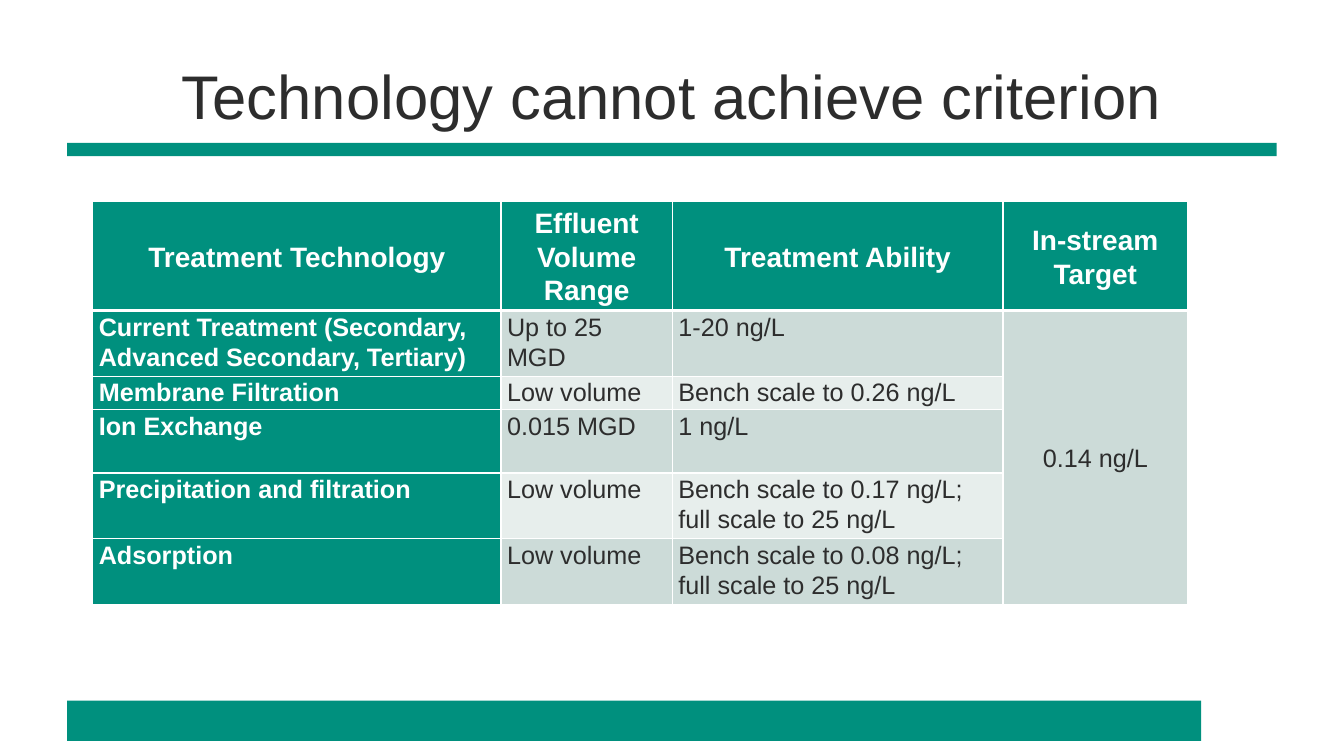
import pptx
import pptx.dml.color
import pptx.enum.shapes
import pptx.enum.text
import pptx.oxml
import pptx.oxml.ns
import pptx.util

Pt = pptx.util.Pt
RGBColor = pptx.dml.color.RGBColor
ANCHOR = pptx.enum.text.MSO_ANCHOR
ALIGN = pptx.enum.text.PP_ALIGN

TEAL = RGBColor(0x00, 0x90, 0x7E)
INK = RGBColor(0x2D, 0x2D, 0x2D)
WHITE = RGBColor(0xFF, 0xFF, 0xFF)
BAND_DARK = RGBColor(0xCC, 0xDB, 0xD8)
BAND_LIGHT = RGBColor(0xE7, 0xEE, 0xEC)

TITLE = "Technology cannot achieve criterion"
TARGET = "0.14 ng/L"
TREATMENTS = [
    ["Treatment Technology", "Effluent Volume Range", "Treatment Ability", "In-stream Target"],
    ["Current Treatment (Secondary, Advanced Secondary, Tertiary)", "Up to 25 MGD", "1-20 ng/L", TARGET],
    ["Membrane Filtration", "Low volume", "Bench scale to 0.26 ng/L", ""],
    ["Ion Exchange", "0.015 MGD", "1 ng/L", ""],
    ["Precipitation and filtration", "Low volume", "Bench scale to 0.17 ng/L;\nfull scale to 25 ng/L", ""],
    ["Adsorption", "Low volume", "Bench scale to 0.08 ng/L;\nfull scale to 25 ng/L", ""],
]
COLUMN_WIDTHS = [291.6, 122.4, 236.2, 131.8]
ROW_HEIGHTS = [41, 45.4, 22.3, 45.4, 45.4, 45.4]
CELL_FORMAT = {
    "margin_left": Pt(4.3), "margin_right": Pt(4.3),
    "margin_top": Pt(0.7), "margin_bottom": Pt(0),
}


def write(frame, text, size, color, bold=False, align=ALIGN.LEFT, spacing=1.0):
    frame.text = text
    for paragraph in frame.paragraphs:
        paragraph.alignment = align
        paragraph.line_spacing = spacing
        font_format = {"name": "Arial", "size": Pt(size), "bold": bold}
        for run in paragraph.runs:
            for attribute, value in font_format.items():
                setattr(run.font, attribute, value)
            run.font.color.rgb = color


def add_bar(slide, left, top, width, height):
    bar = slide.shapes.add_shape(
        pptx.enum.shapes.MSO_SHAPE.RECTANGLE, Pt(left), Pt(top), Pt(width), Pt(height))
    bar.shadow.inherit = False
    bar.fill.solid()
    bar.fill.fore_color.rgb = TEAL
    bar.line.fill.background()


def add_heading(slide, left, top, width, height):
    # Rule under the title, then the title itself
    add_bar(slide, left, top + height - 9.5, width, 9.5)
    heading = slide.shapes.add_textbox(Pt(left), Pt(top), Pt(width), Pt(height)).text_frame
    heading.word_wrap = True
    heading.vertical_anchor = ANCHOR.MIDDLE
    write(heading, TITLE, 44, INK, align=ALIGN.CENTER)


def add_borders(cell, top_width, bottom_width):
    properties = cell._tc.get_or_add_tcPr()
    for side, width in {"L": 1, "R": 1, "T": top_width, "B": bottom_width}.items():
        properties.append(pptx.oxml.parse_xml(
            f'<a:ln{side} {pptx.oxml.ns.nsdecls("a")} w="{Pt(width)}">'
            f'<a:solidFill><a:srgbClr val="{WHITE}"/></a:solidFill></a:ln{side}>'))


def add_treatment_table(slide, left, top):
    table = slide.shapes.add_table(
        len(ROW_HEIGHTS), len(COLUMN_WIDTHS), Pt(left), Pt(top),
        Pt(sum(COLUMN_WIDTHS)), Pt(sum(ROW_HEIGHTS))).table
    for column, width in zip(table.columns, COLUMN_WIDTHS):
        column.width = Pt(width)
    for row, height in zip(table.rows, ROW_HEIGHTS):
        row.height = Pt(height)

    # One target spans every treatment
    target_column = len(COLUMN_WIDTHS) - 1
    table.cell(1, target_column).merge(table.cell(len(ROW_HEIGHTS) - 1, target_column))

    for r, treatment in enumerate(TREATMENTS):
        for c, text in enumerate(treatment):
            cell = table.cell(r, c)
            is_header = r == 0
            is_label = is_header or c == 0
            centered = is_header or c == target_column
            for attribute, value in CELL_FORMAT.items():
                setattr(cell, attribute, value)
            cell.vertical_anchor = ANCHOR.MIDDLE if centered else ANCHOR.TOP
            add_borders(cell, 3 if r == 1 else 1, 3 if is_header else 1)
            band = BAND_DARK if r % 2 or c == target_column else BAND_LIGHT
            cell.fill.solid()
            cell.fill.fore_color.rgb = TEAL if is_label else band
            write(cell.text_frame, text, 20 if is_header else 18,
                  WHITE if is_label else INK, is_label,
                  ALIGN.CENTER if centered else ALIGN.LEFT, 1.07)


def main():
    presentation = pptx.Presentation()
    presentation.slide_width, presentation.slide_height = Pt(960), Pt(540)
    slide = presentation.slides.add_slide(presentation.slide_layouts[6])
    add_heading(slide, 48, 24, 864, 87.6)
    add_treatment_table(slide, 66.3, 144)
    # Footer band
    add_bar(slide, 48, 500.4, 810, 28.8)
    presentation.save("out.pptx")


if __name__ == "__main__":
    main()
